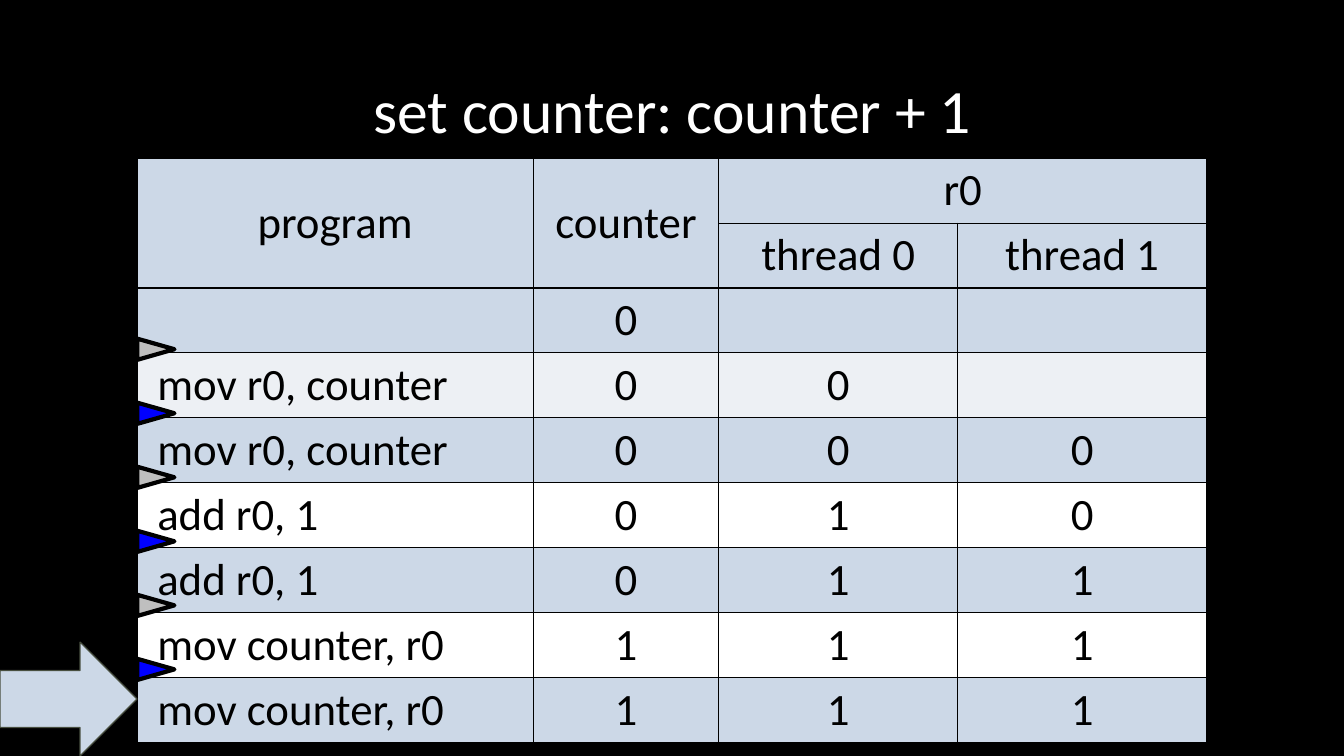
from dataclasses import dataclass

from lxml.etree import SubElement
from pptx import Presentation
from pptx.dml.color import RGBColor
from pptx.enum.shapes import MSO_SHAPE
from pptx.enum.text import MSO_ANCHOR, PP_ALIGN
from pptx.oxml.ns import qn
from pptx.util import Inches, Pt

SLIDE_WIDTH, SLIDE_HEIGHT = Inches(13.33), Inches(7.5)


@dataclass(frozen=True)
class Theme:
    font: str = "Calibri"
    title_size: int = 44
    table_size: int = 32
    black: str = "000000"
    white: str = "FFFFFF"
    band: str = "CCD8E7"
    pale: str = "EDF0F4"
    thread_0: str = "BFBFBF"
    thread_1: str = "0000FF"
    arrow_line: str = "484F40"


@dataclass(frozen=True)
class Box:
    """Place and size in percent of the slide."""
    left: float
    top: float
    width: float
    height: float

    def lengths(self) -> dict:
        return {"left": across(self.left), "top": down(self.top),
                "width": across(self.width), "height": down(self.height)}


@dataclass(frozen=True)
class Step:
    program: str
    counter: str
    thread_0: str
    thread_1: str
    fill: str

    def texts(self) -> tuple:
        return self.program, self.counter, self.thread_0, self.thread_1


@dataclass(frozen=True)
class Marker:
    kind: MSO_SHAPE
    box: Box
    fill: str
    line: str
    line_width: float
    rotation: int = 0


THEME = Theme()
TITLE_BOX = Box(6.9, 5.33, 86.27, 19.33)
TABLE_BOX = Box(10.2, 20.93, 79.59, 76)
COLUMN_SHARES = (29.48, 13.8, 17.78, 18.53)
HEADERS = (
    Step("program", "counter", "r0", "", THEME.band),
    Step("", "", "thread 0", "thread 1", THEME.band),
)
STEPS = (
    Step("", "0", "", "", THEME.band),
    Step("mov r0, counter", "0", "0", "", THEME.pale),
    Step("mov r0, counter", "0", "0", "0", THEME.band),
    Step("add r0, 1", "0", "1", "0", THEME.white),
    Step("add r0, 1", "0", "1", "1", THEME.band),
    Step("mov counter, r0", "1", "1", "1", THEME.white),
    Step("mov counter, r0", "1", "1", "1", THEME.band),
)
THREAD_COLORS = (THEME.thread_0, THEME.thread_1)
FIRST_SWITCH_TOP, SWITCH_PITCH = 43.73, 8.47
SWITCHES = tuple(
    Marker(MSO_SHAPE.ISOSCELES_TRIANGLE,
           Box(10.8, FIRST_SWITCH_TOP + index * SWITCH_PITCH, 1.58, 4.93),
           THREAD_COLORS[index % 2], THEME.black, 3, 90)
    for index in range(len(STEPS) - 1)
)
CURRENT_STEP = Marker(MSO_SHAPE.RIGHT_ARROW, Box(0, 84.93, 10.2, 15.07),
                      THEME.band, THEME.arrow_line, 0.85)


def across(percent: float) -> int:
    return round(SLIDE_WIDTH * percent / 100)


def down(percent: float) -> int:
    return round(SLIDE_HEIGHT * percent / 100)


def apply(target, values: dict) -> None:
    for name, value in values.items():
        setattr(target, name, value)


def paint(fill, color: str) -> None:
    fill.solid()
    fill.fore_color.rgb = RGBColor.from_string(color)


def write(text_frame, text: str, size: int, color: str, **paragraph_format) -> None:
    text_frame.text = text
    paragraph = text_frame.paragraphs[0]
    apply(paragraph, paragraph_format)
    apply(paragraph.font, {"name": THEME.font, "size": Pt(size)})
    paragraph.font.color.rgb = RGBColor.from_string(color)


def add_borders(cell) -> None:
    """Draw all four sides; call before filling, as lines precede the fill."""
    properties = cell._tc.get_or_add_tcPr()
    for side in ("a:lnL", "a:lnR", "a:lnT", "a:lnB"):
        line = SubElement(properties, qn(side), w=str(Pt(1)))
        solid = SubElement(line, qn("a:solidFill"))
        SubElement(solid, qn("a:srgbClr"), val=THEME.black)


def add_title(slide) -> None:
    title = slide.shapes.title
    apply(title, TITLE_BOX.lengths())
    apply(title.text_frame, {"vertical_anchor": MSO_ANCHOR.MIDDLE, "word_wrap": True})
    write(title.text_frame, "set counter: counter + 1", THEME.title_size,
          THEME.white, alignment=PP_ALIGN.CENTER, line_spacing=0.9)


def add_trace_table(slide) -> None:
    rows = HEADERS + STEPS
    table = slide.shapes.add_table(len(rows), len(COLUMN_SHARES),
                                   **TABLE_BOX.lengths()).table
    apply(table, {"first_row": False, "horz_banding": False})
    for column, share in zip(table.columns, COLUMN_SHARES):
        column.width = across(share)
    for row_index, step in enumerate(rows):
        for column_index, text in enumerate(step.texts()):
            cell = table.cell(row_index, column_index)
            add_borders(cell)
            paint(cell.fill, step.fill)
            is_code = column_index == 0 and row_index >= len(HEADERS)
            if is_code:
                cell.margin_left = Inches(0.2)
            if text:
                write(cell.text_frame, text, THEME.table_size, THEME.black,
                      alignment=PP_ALIGN.LEFT if is_code else PP_ALIGN.CENTER)
    for column_index in (0, 1):
        header = table.cell(0, column_index)
        header.merge(table.cell(1, column_index))
        header.vertical_anchor = MSO_ANCHOR.MIDDLE
    table.cell(0, 2).merge(table.cell(0, 3))


def add_marker(slide, marker: Marker) -> None:
    shape = slide.shapes.add_shape(marker.kind, **marker.box.lengths())
    shape.shadow.inherit = False
    shape.rotation = marker.rotation
    paint(shape.fill, marker.fill)
    paint(shape.line.fill, marker.line)
    shape.line.width = Pt(marker.line_width)


def main() -> None:
    presentation = Presentation()
    apply(presentation, {"slide_width": SLIDE_WIDTH, "slide_height": SLIDE_HEIGHT})
    slide = presentation.slides.add_slide(
        presentation.slide_layouts.get_by_name("Title Only"))
    paint(slide.background.fill, THEME.black)
    add_title(slide)
    add_trace_table(slide)
    for marker in (*SWITCHES, CURRENT_STEP):
        add_marker(slide, marker)
    presentation.save("out.pptx")


if __name__ == "__main__":
    main()
